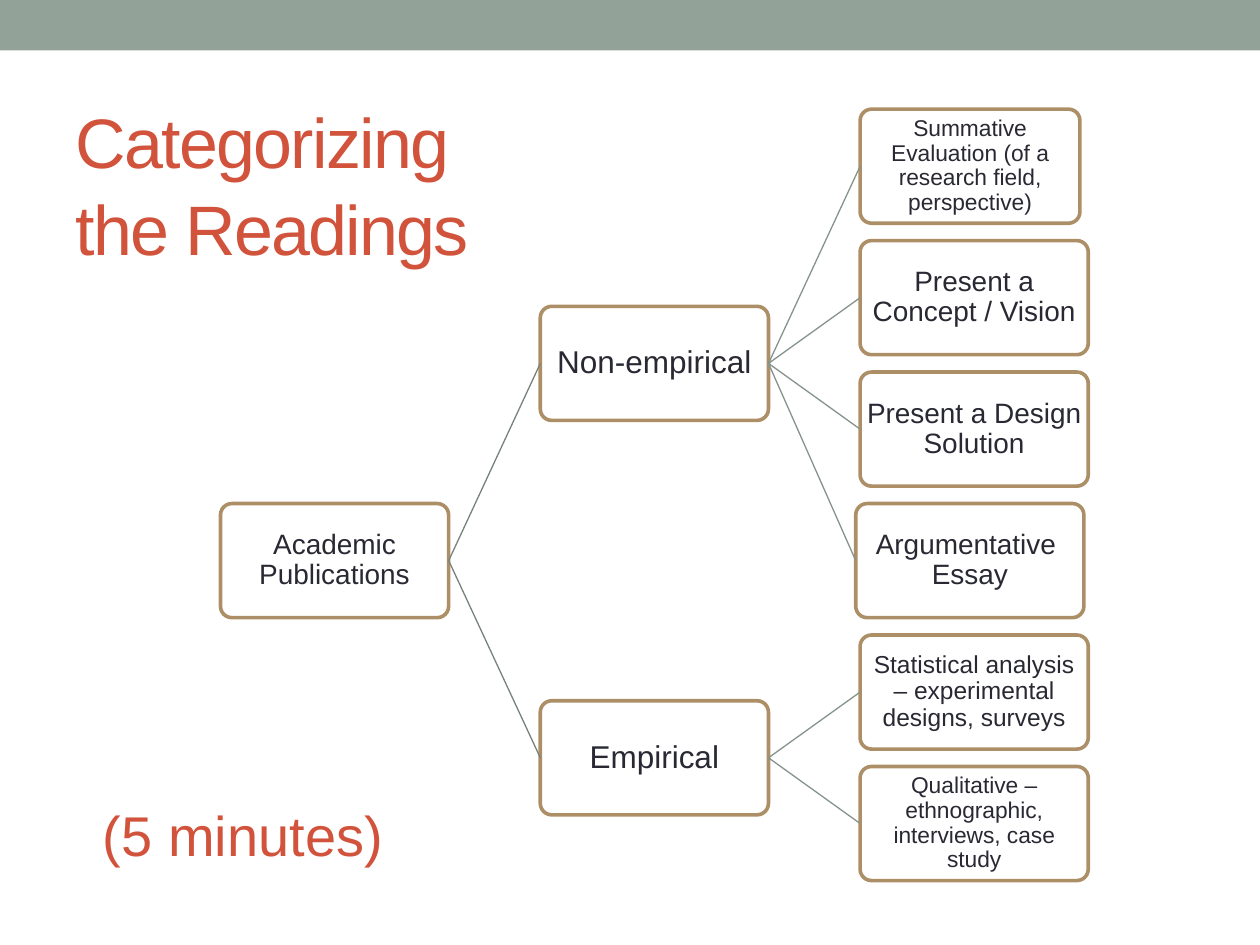
"""Build a slide with a tree diagram that categorizes academic readings."""
from pptx import Presentation
from pptx.dml.color import RGBColor
from pptx.enum import shapes, text
from pptx.oxml import parse_xml
from pptx.oxml.ns import nsdecls
from pptx.util import Pt

TITLE = ("Categorizing the Readings", 36, 41.8, 265.7, 124.6)
TIMING = ("(5 minutes)", 51.8, 453.6, 208, 46)
ACCENT, INK, BAND, TAN = "D2533C", "292934", "93A299", "AD8F67"
LINE_COLORS = ["76827B", "85938B"]
BOX_W, BOX_H = 130.4, 65.2
LEFT, TOP, COL_STEP, ROW_STEP = 126, 62.4, 182.75, 75.12

# label, size, column, row, parent, left shift, width change
NODES = [
    ("Academic Publications", 16, 0, 3, None, 0, 0),
    ("Non-empirical", 18, 1, 1.5, 0, 0, 0),
    ("Summative Evaluation (of a research field, perspective)", 13, 2, 0, 1, 0, -4.8),
    ("Present a Concept / Vision", 16, 2, 1, 1, 0, 0),
    ("Present a Design Solution", 16, 2, 2, 1, 0, 0),
    ("Argumentative \nEssay", 16, 2, 3, 1, -2.5, 0),
    ("Empirical", 18, 1, 4.5, 0, 0, 0),
    ("Statistical analysis – experimental designs, surveys", 14, 2, 4, 6, 0, 0),
    ("Qualitative – ethnographic, interviews, case study", 13, 2, 5, 6, 0, 0),
]


def rgb(color):
    return RGBColor.from_string(color)


def set_attrs(obj, values):
    for name, value in values.items():
        setattr(obj, name, value)


def write(sp, label, size, color, frame=None, para=None):
    tf = sp.text_frame
    set_attrs(tf, {"word_wrap": True, **(frame or {})})
    p = tf.paragraphs[0]
    p.text = label
    set_attrs(p, para or {})
    for r in p.runs:
        set_attrs(r.font, {"name": "Arial", "size": Pt(size)})
        r.font.color.rgb = rgb(color)
    return p


def add_box(s, kind, x, y, w, h, fill):
    sp = s.shapes.add_shape(kind, Pt(x), Pt(y), Pt(w), Pt(h))
    sp.shadow.inherit = False
    sp.fill.solid()
    sp.fill.fore_color.rgb = rgb(fill)
    sp.line.fill.background()
    return sp


def add_node(s, label, size, col, row, shift, widen):
    sp = add_box(s, shapes.MSO_SHAPE.ROUNDED_RECTANGLE, LEFT + col * COL_STEP + shift,
                 TOP + row * ROW_STEP, BOX_W + widen, BOX_H, "FFFFFF")
    sp.adjustments[0] = 0.1
    sp.line.color.rgb = rgb(TAN)
    sp.line.width = Pt(2.08)
    sides = ("left", "right", "top", "bottom")
    write(sp, label, size, INK,
          {"vertical_anchor": text.MSO_ANCHOR.MIDDLE,
           **{f"margin_{side}": Pt(0.5) for side in sides}},
          {"alignment": text.PP_ALIGN.CENTER, "line_spacing": 0.9})
    return sp


def add_link(s, parent, child, color):
    line = s.shapes.add_connector(shapes.MSO_CONNECTOR.STRAIGHT, 0, 0, 0, 0)
    line.begin_connect(parent, 3)
    line.end_connect(child, 1)
    line.line.color.rgb = rgb(color)
    line.line.width = Pt(0.75)
    line._element.spPr.append(parse_xml(f"<a:effectLst {nsdecls('a')}/>"))


def main():
    prs = Presentation()
    set_attrs(prs, {"slide_width": Pt(720), "slide_height": Pt(540)})
    s = prs.slides.add_slide(prs.slide_layouts[5])
    add_box(s, shapes.MSO_SHAPE.RECTANGLE, 0, 0, 720, 28.8, BAND)

    label, *place = TITLE
    title = s.shapes.title
    set_attrs(title, dict(zip(("left", "top", "width", "height"), map(Pt, place))))
    p = write(title, label, 40, ACCENT,
              {"vertical_anchor": text.MSO_ANCHOR.MIDDLE, "auto_size": text.MSO_AUTO_SIZE.NONE},
              {"alignment": text.PP_ALIGN.LEFT, "line_spacing": 1.04})
    p.runs[0].font._element.set("spc", "-100")

    boxes = []
    for label, size, col, row, parent, shift, widen in NODES:
        boxes.append(add_node(s, label, size, col, row, shift, widen))
        if parent is not None:
            add_link(s, boxes[parent], boxes[-1], LINE_COLORS[col - 1])

    label, *place = TIMING
    write(s.shapes.add_textbox(*map(Pt, place)), label, 32, ACCENT)
    prs.save("out.pptx")


if __name__ == "__main__":
    main()
